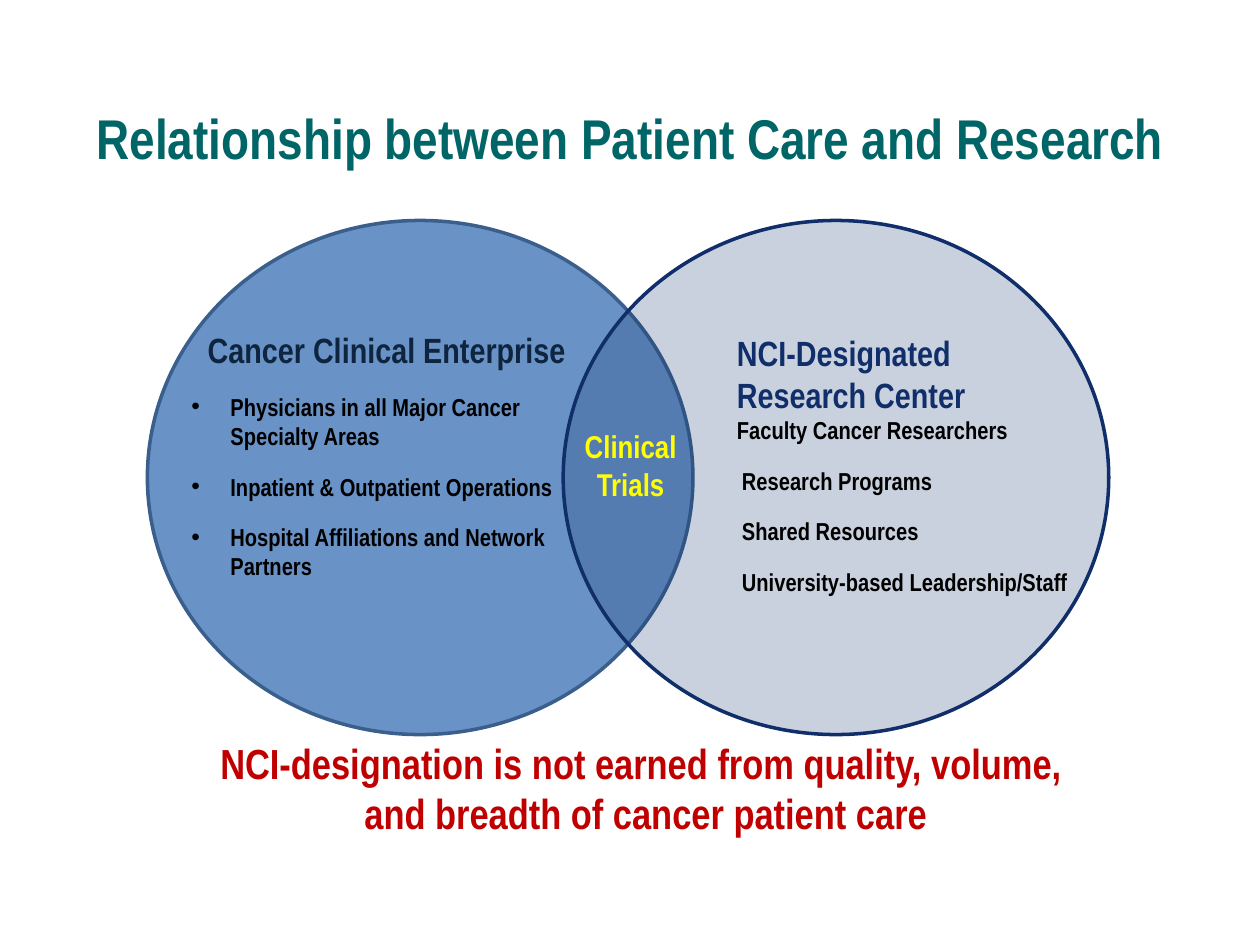
import pptx
import pptx.dml.color
import pptx.enum.shapes
import pptx.enum.text
import pptx.oxml
import pptx.oxml.ns
import pptx.util
from dataclasses import dataclass

Inches, Pt = pptx.util.Inches, pptx.util.Pt
RGB = pptx.dml.color.RGBColor.from_string
ALIGN = pptx.enum.text.PP_ALIGN
qn = pptx.oxml.ns.qn


@dataclass
class Theme:
    font: str = "Arial Narrow"
    teal: str = "006567"
    blue: str = "4F81BD"
    blue_edge: str = "3A5F8C"
    navy: str = "102E6A"
    dark: str = "0F243E"
    black: str = "000000"
    red: str = "C00000"
    yellow: str = "FFFF00"
    title: int = 32
    closing: int = 24
    heading: int = 20
    overlap: int = 18
    body: int = 14
    gap: int = 12


T = Theme()

# Content: a paragraph is (runs, left indent, bulleted); a run is (text, size, colour)
TITLE = "Relationship between Patient Care and Research"
CARE_ITEMS = ["Physicians in all Major Cancer\nSpecialty Areas",
              "Inpatient & Outpatient Operations",
              "Hospital Affiliations and Network\nPartners"]
RESEARCH_ITEMS = ["Research Programs", "Shared Resources",
                  "University-based Leadership/Staff"]
CARE = [([("Cancer Clinical Enterprise", T.heading, T.dark)], 0.13, False)]
CARE += [([(t, T.body, T.black)], 0.31, True) for t in CARE_ITEMS]
RESEARCH = [([("NCI-Designated \nResearch Center\n", T.heading, T.navy),
              ("Faculty Cancer Researchers", T.body, T.black)], 0, False)]
RESEARCH += [([(t, T.body, T.black)], 0.04, False) for t in RESEARCH_ITEMS]
CLOSING = [([("NCI-designation is not earned from quality, volume, \n"
              "and breadth of cancer patient care", T.closing, T.red)], 0, False)]
OVERLAP = [([("Clinical\nTrials", T.overlap, T.yellow)], 0, False)]

# Left, top, width, height of each text box
TEXTS = [
    (CARE, (1.42, 2.56, 3.58, 2.52), ALIGN.LEFT),
    (RESEARCH, (5.75, 2.58, 3.19, 2.22), ALIGN.LEFT),
    (CLOSING, (0.25, 5.8, 9.75, 0.91), ALIGN.CENTER),
    (OVERLAP, (4.46, 3.34, 1.09, 0.71), ALIGN.CENTER),
]
# Left edge, fill, opacity in percent, outline
CIRCLES = [(1.17, T.blue, 85, T.blue_edge), (4.47, T.navy, 22, T.navy)]
CIRCLE_TOP, CIRCLE_W, CIRCLE_H = 1.75, 4.33, 4.08


def add_run(p, text, size, color):
    for i, line in enumerate(text.split("\n")):
        if i:
            p.add_line_break()
        if line:
            r = p.add_run()
            r.text = line
            r.font.name, r.font.size, r.font.bold = T.font, Pt(size), True
            r.font.color.rgb = RGB(color)


def set_indent(p, left, bulleted):
    pPr = p._p.get_or_add_pPr()
    pPr.set("marL", str(Inches(left)))
    pPr.set("indent", str(-Inches(left) if bulleted else 0))
    if bulleted:
        for tag, key, value in (("a:buFont", "typeface", "Arial"),
                                ("a:buChar", "char", "•")):
            pPr.append(pptx.oxml.parse_xml(
                f'<{tag} {pptx.oxml.ns.nsdecls("a")} {key}="{value}"/>'))


def add_circle(s, left, fill, opacity, edge):
    sp = s.shapes.add_shape(pptx.enum.shapes.MSO_SHAPE.OVAL, Inches(left),
                            Inches(CIRCLE_TOP), Inches(CIRCLE_W), Inches(CIRCLE_H))
    sp.shadow.inherit = False
    sp.fill.solid()
    sp.fill.fore_color.rgb = RGB(fill)
    color = sp._element.spPr.find(qn("a:solidFill"))[0]
    color.append(pptx.oxml.parse_xml(
        f'<a:alpha {pptx.oxml.ns.nsdecls("a")} val="{opacity * 1000}"/>'))
    sp.line.color.rgb = RGB(edge)
    sp.line.width = Pt(2)


def add_text(s, paragraphs, box, align):
    tf = s.shapes.add_textbox(*map(Inches, box)).text_frame
    tf.word_wrap = True
    tf.auto_size = pptx.enum.text.MSO_AUTO_SIZE.SHAPE_TO_FIT_TEXT
    for i, (runs, left, bulleted) in enumerate(paragraphs):
        p = tf.add_paragraph() if i else tf.paragraphs[0]
        p.alignment = align
        if i:
            p.space_before = Pt(T.gap)
        set_indent(p, left, bulleted)
        for run in runs:
            add_run(p, *run)


def main():
    prs = pptx.Presentation()
    prs.slide_width, prs.slide_height = Inches(10), Inches(7.5)
    s = prs.slides.add_slide(prs.slide_layouts[5])

    # Title
    title = s.shapes.title
    title.left, title.top, title.width, title.height = map(
        Inches, (0.17, 0.67, 9.67, 0.83))
    tf = title.text_frame
    tf.vertical_anchor = pptx.enum.text.MSO_ANCHOR.MIDDLE
    tf.paragraphs[0].alignment = ALIGN.CENTER
    add_run(tf.paragraphs[0], TITLE, T.title, T.teal)

    # Overlapping circles, then the text over them
    for circle in CIRCLES:
        add_circle(s, *circle)
    for text in TEXTS:
        add_text(s, *text)

    prs.save("out.pptx")


if __name__ == "__main__":
    main()
